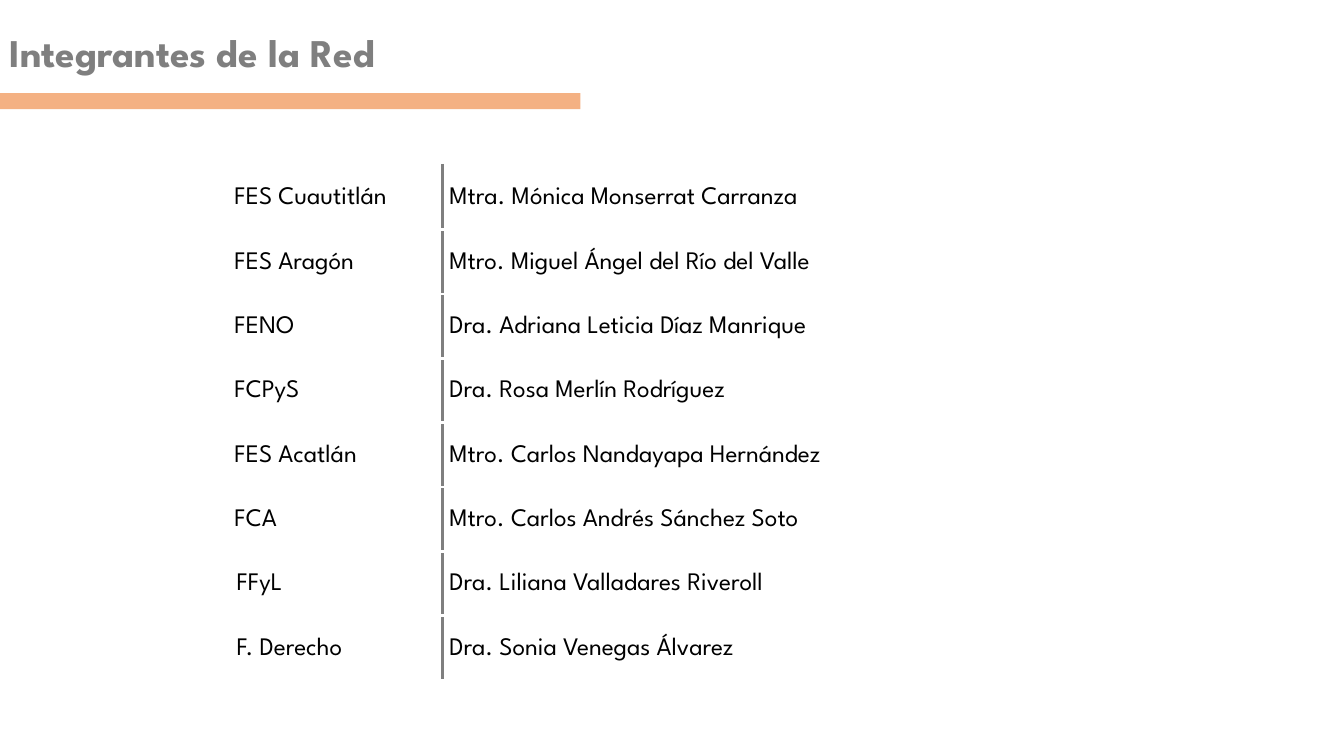
from pptx import Presentation
from pptx.dml.color import RGBColor
from pptx.enum.shapes import MSO_SHAPE
from pptx.enum.text import MSO_ANCHOR
from pptx.oxml import parse_xml
from pptx.oxml.ns import nsdecls
from pptx.util import Pt

COLORS = {"white": "FFFFFF", "gray": "7F7F7F", "orange": "F4B183", "black": "000000"}
FONT = "League Spartan"
MEMBERS = [
    ("FES Cuautitlán", "Mtra. Mónica Monserrat Carranza"),
    ("FES Aragón", "Mtro. Miguel Ángel del Río del Valle"),
    ("FENO", "Dra. Adriana Leticia Díaz Manrique"),
    ("FCPyS", "Dra. Rosa Merlín Rodríguez"),
    ("FES Acatlán", "Mtro. Carlos Nandayapa Hernández"),
    ("FCA", "Mtro. Carlos Andrés Sánchez Soto"),
    ("FFyL", "Dra. Liliana Valladares Riveroll"),
    ("F. Derecho", "Dra. Sonia Venegas Álvarez"),
]
COLUMN_WIDTHS = (153.5, 346)
ROW_HEIGHT = 46
WIDE_INSET_ROWS = (6, 7)


def write(frame, text, size, color, bold=False, line_spacing=None, space_after=None):
    para = frame.paragraphs[0]
    para.line_spacing = line_spacing
    para.space_after = space_after
    span = para.add_run()
    span.text = text
    span.font.name = FONT
    span.font.size = Pt(size)
    span.font.bold = bold
    span.font.color.rgb = RGBColor.from_string(COLORS[color])


def set_borders(cell, divider):
    """Draw white borders, with a thicker gray one on the divider side."""
    properties = cell._tc.get_or_add_tcPr()
    for position, side in enumerate(("lnL", "lnR", "lnT", "lnB")):
        color, width = ("gray", 3) if side == divider else ("white", 2.25)
        properties.insert(position, parse_xml(
            f'<a:{side} {nsdecls("a")} w="{Pt(width)}"><a:solidFill>'
            f'<a:srgbClr val="{COLORS[color]}"/></a:solidFill></a:{side}>'))


deck = Presentation()
deck.slide_width, deck.slide_height = Pt(960), Pt(540)
page = deck.slides.add_slide(deck.slide_layouts[6])

title_bar = page.shapes.add_shape(MSO_SHAPE.RECTANGLE, Pt(0), Pt(66.5), Pt(414.5), Pt(11.5))
title_bar.shadow.inherit = False
title_bar.fill.solid()
title_bar.fill.fore_color.rgb = RGBColor.from_string(COLORS["orange"])
title_bar.line.fill.background()

title_box = page.shapes.add_textbox(Pt(0), Pt(16.5), Pt(307.5), Pt(75))
title_box.text_frame.word_wrap = False
title_box.text_frame.vertical_anchor = MSO_ANCHOR.TOP
write(title_box.text_frame, "Integrantes de la Red", size=28, color="gray", bold=True)

table = page.shapes.add_table(
    len(MEMBERS), len(COLUMN_WIDTHS), Pt(162.5), Pt(118),
    Pt(sum(COLUMN_WIDTHS)), Pt(ROW_HEIGHT * len(MEMBERS))).table
table.first_row = False
table.horz_banding = False
for column, width in zip(table.columns, COLUMN_WIDTHS):
    column.width = Pt(width)

for row_index, member in enumerate(MEMBERS):
    table.rows[row_index].height = Pt(ROW_HEIGHT)
    for column_index, text in enumerate(member):
        cell = table.cell(row_index, column_index)
        wide = column_index == 0 and row_index in WIDE_INSET_ROWS
        cell.margin_left = cell.margin_right = Pt(6.5 if wide else 5)
        cell.margin_top, cell.margin_bottom = Pt(0.75), Pt(0)
        cell.vertical_anchor = MSO_ANCHOR.MIDDLE
        cell.fill.solid()
        cell.fill.fore_color.rgb = RGBColor.from_string(COLORS["white"])
        set_borders(cell, divider=("lnR", "lnL")[column_index])
        write(cell.text_frame, text, size=18, color="black",
              line_spacing=1.07, space_after=Pt(8))

deck.save("out.pptx")
